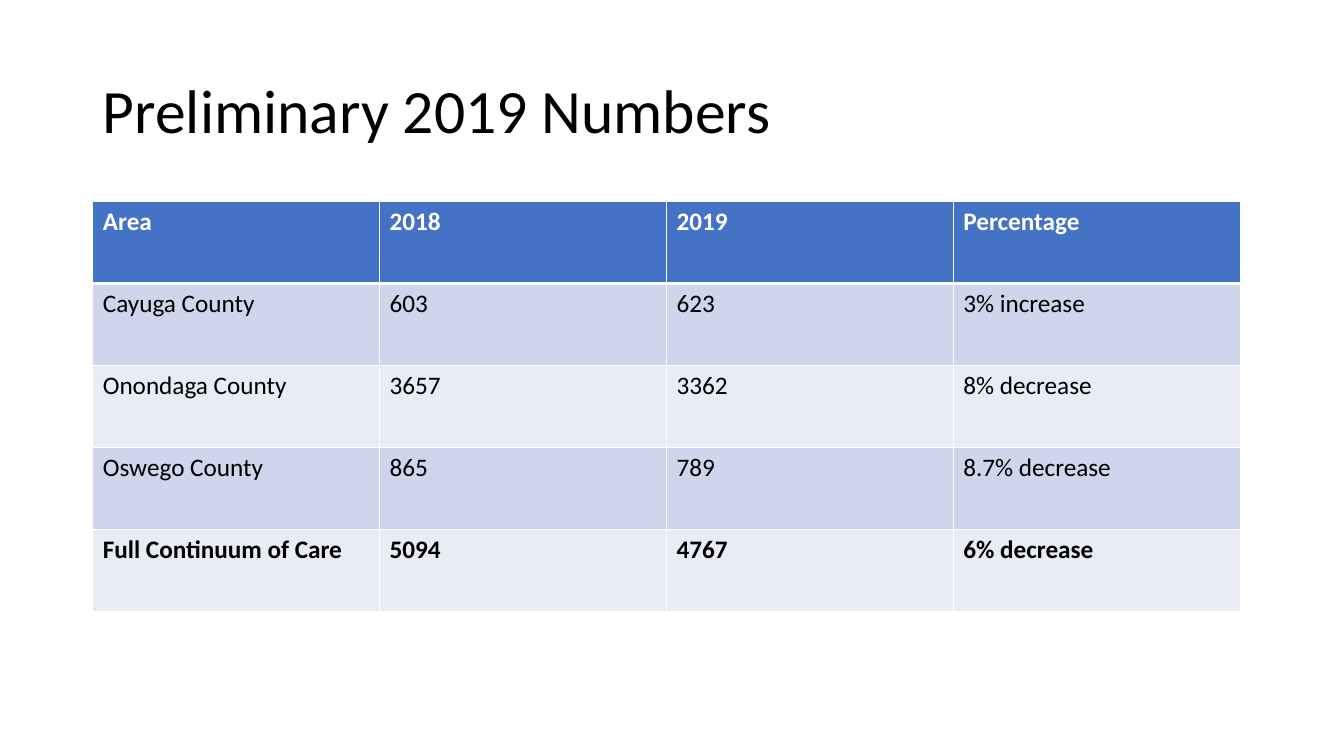
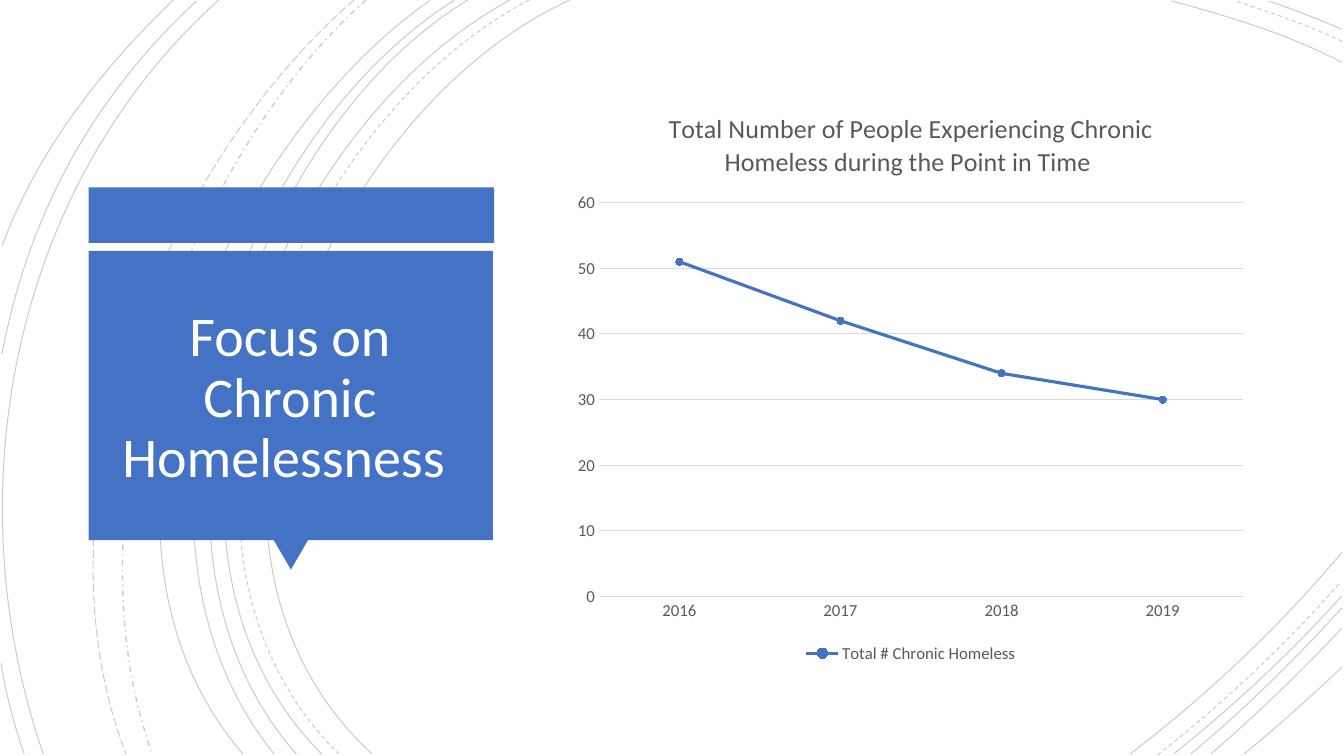
from lxml.etree import SubElement
from pptx import Presentation
from pptx.chart.data import CategoryChartData as ChartData
from pptx.dml.color import RGBColor as RGB
from pptx.enum.chart import XL_CHART_TYPE as CHART
from pptx.enum.chart import XL_LEGEND_POSITION as LEGEND
from pptx.enum.chart import XL_MARKER_STYLE as MARKER
from pptx.enum.chart import XL_TICK_MARK as TICK
from pptx.enum.dml import MSO_LINE as DASH
from pptx.enum.shapes import MSO_SHAPE as SHAPE
from pptx.enum.text import MSO_ANCHOR as ANCHOR
from pptx.enum.text import MSO_AUTO_SIZE as FIT
from pptx.enum.text import PP_ALIGN as ALIGN
from pptx.oxml import parse_xml
from pptx.oxml.ns import nsdecls, qn
from pptx.util import Inches, Pt

FONT = "Calibri"
BLACK = RGB(0, 0, 0)
WHITE = RGB(255, 255, 255)
BLUE = RGB(0x44, 0x72, 0xC4)
BANDS = RGB(0xCF, 0xD5, 0xEA), RGB(0xE9, 0xEB, 0xF5)
GRAY = RGB(0x59, 0x59, 0x59)
RULE = RGB(0xD9, 0xD9, 0xD9)

ROWS = [
    ("Area", "2018", "2019", "Percentage"),
    ("Cayuga County", "603", "623", "3% increase"),
    ("Onondaga County", "3657", "3362", "8% decrease"),
    ("Oswego County", "865", "789", "8.7% decrease"),
    ("Full Continuum of Care", "5094", "4767", "6% decrease"),
]

ARCS = [
    (DASH.SOLID, 0.75, [
        [(5.65, 0), (3.15, 1.15), (1.43, 5.4), (3.69, 7.48)],
        [(13.31, 0.62), (12.78, 0.34), (12.18, 0.16), (11.62, 0.01)],
        [(11.21, 7.48), (11.97, 6.9), (12.69, 6.22), (13.31, 5.48)],
        [(5.06, 0), (2.7, 1.27), (1.1, 5.37), (3.19, 7.48)],
        [(13.31, 0.29), (13.07, 0.19), (12.83, 0.09), (12.58, 0.01)],
        [(11.64, 7.48), (12.23, 7.01), (12.8, 6.48), (13.31, 5.91)],
        [(4.64, 0), (2.44, 1.33), (1.1, 5.41), (2.94, 7.48)],
        [(11.81, 7.48), (12.34, 7.04), (12.84, 6.55), (13.31, 6.03)],
        [(4.51, 0), (2.31, 1.38), (0.97, 5.33), (2.72, 7.48)],
        [(12.01, 7.48), (12.46, 7.09), (12.9, 6.67), (13.31, 6.23)],
        [(4.27, 0), (2.17, 1.47), (0.53, 5.29), (2.41, 7.48)],
        [(12.34, 7.48), (12.67, 7.21), (12.99, 6.92), (13.31, 6.62)],
        [(2.17, 0), (0.11, 1.85), (-0.46, 4.9), (0.43, 7.48)],
        [(1.95, 0.01), (0.92, 0.96), (0.28, 2.14), (0.02, 3.51)],
        [(0.01, 6.58), (0.06, 6.89), (0.14, 7.19), (0.24, 7.48)],
        [(1.72, 0), (1, 0.69), (0.37, 1.5), (0.02, 2.44)],
    ]),
    (DASH.DASH, 0.75, [
        [(5.25, 0), (2.85, 1.25), (1.23, 5.37), (3.36, 7.48)],
        [(13.31, 0.41), (12.97, 0.25), (12.6, 0.12), (12.25, 0.01)],
        [(11.48, 7.49), (12.13, 6.98), (12.75, 6.4), (13.3, 5.77)],
    ]),
    (DASH.DASH_DOT, 1, [
        [(3.63, 0), (1.76, 1.66), (0.65, 5.09), (1.51, 7.48)],
    ]),
    (DASH.LONG_DASH, 0.75, [
        [(3.51, 0), (1.57, 1.69), (0.29, 4.99), (1.25, 7.48)],
    ]),
]


def style(font, size, color, bold=False):
    font.name = FONT
    font.size = Pt(size)
    font.bold = bold
    font.color.rgb = color


def place(shape, box):
    shape.left, shape.top, shape.width, shape.height = map(Inches, box)


def add_title(slide, text, box, size, color, align):
    title = slide.shapes.title
    place(title, box)
    slide.shapes._spTree.append(title._element)
    frame = title.text_frame
    frame.text = text
    frame.word_wrap = True
    frame.auto_size = FIT.NONE
    frame.vertical_anchor = ANCHOR.MIDDLE
    para = frame.paragraphs[0]
    para.alignment = align
    para.line_spacing = 0.9
    style(para.runs[0].font, size, color)


def add_edges(cell, base):
    props = cell._tc.get_or_add_tcPr()
    for side in "LRTB":
        width = Pt(base if side == "B" else 1)
        props.append(parse_xml(
            f'<a:ln{side} {nsdecls("a")} w="{width}"><a:solidFill>'
            f'<a:srgbClr val="{WHITE}"/></a:solidFill></a:ln{side}>'))


def add_grid(slide, rows, box):
    spot = map(Inches, box)
    table = slide.shapes.add_table(len(rows), len(rows[0]), *spot).table
    last = len(rows) - 1
    for r, row in enumerate(rows):
        for c, text in enumerate(row):
            cell = table.cell(r, c)
            cell.text = text
            add_edges(cell, 1 if r else 3)
            cell.fill.solid()
            cell.fill.fore_color.rgb = BANDS[(r - 1) % 2] if r else BLUE
            font = cell.text_frame.paragraphs[0].runs[0].font
            style(font, 18, BLACK if r else WHITE, r in (0, last))


def add_arc(slide, knots, dash, width):
    dots = [(Inches(x), Inches(y)) for x, y in knots]
    pen = slide.shapes.build_freeform(*dots[0])
    pen.add_line_segments(dots[1:], close=False)
    arc = pen.convert_to_shape()
    route = arc._element.find(".//" + qn("a:path"))
    legs = route.findall(qn("a:lnTo"))
    curve = SubElement(route, qn("a:cubicBezTo"))
    for leg in legs:
        curve.append(leg[0])
        route.remove(leg)
    arc.shadow.inherit = False
    arc.fill.background()
    arc.line.width = Pt(width)
    arc.line.color.rgb = BLACK
    arc.line.dash_style = dash
    tint = arc.line._ln.find(".//" + qn("a:srgbClr"))
    SubElement(tint, qn("a:alpha"), val="20000")


def add_block(slide, kind, box, turn=0):
    block = slide.shapes.add_shape(kind, *map(Inches, box))
    block.rotation = turn
    block.shadow.inherit = False
    block.fill.solid()
    block.fill.fore_color.rgb = BLUE
    block.line.fill.background()


def set_axis(axis):
    axis.major_tick_mark = axis.minor_tick_mark = TICK.NONE
    style(axis.tick_labels.font, 12, GRAY)


def set_plot(chart, x, y, w, h):
    area = chart._chartSpace.chart.plotArea
    for old in area.findall(qn("c:layout")):
        area.remove(old)
    area.insert(0, parse_xml(
        f'<c:layout {nsdecls("c")}><c:manualLayout>'
        '<c:layoutTarget val="inner"/><c:xMode val="edge"/>'
        f'<c:yMode val="edge"/><c:x val="{x}"/><c:y val="{y}"/>'
        f'<c:w val="{w}"/><c:h val="{h}"/></c:manualLayout></c:layout>'))


def add_trend(slide, box):
    data = ChartData()
    data.categories = ["2016", "2017", "2018", "2019"]
    data.add_series("Total # Chronic Homeless", [51, 42, 34, 30])
    chart = slide.shapes.add_chart(
        CHART.LINE_MARKERS, *map(Inches, box), data).chart
    style(chart.font, 10, BLACK)
    chart.has_title = True
    head = chart.chart_title.text_frame
    head.text = ("Total Number of People Experiencing Chronic "
                 "Homeless during the Point in Time ")
    style(head.paragraphs[0].runs[0].font, 18.6, GRAY)
    chart.has_legend = True
    chart.legend.position = LEGEND.BOTTOM
    chart.legend.include_in_layout = False
    style(chart.legend.font, 12, GRAY)

    years, counts = chart.category_axis, chart.value_axis
    set_axis(years)
    set_axis(counts)
    years.format.line.color.rgb = RULE
    years.format.line.width = Pt(0.75)
    counts.minimum_scale, counts.maximum_scale = 0, 60
    counts.major_unit = 10
    counts.format.line.fill.background()
    grid = counts.major_gridlines.format.line
    grid.color.rgb = RULE
    grid.width = Pt(0.75)

    chart.plots[0].vary_by_categories = False
    line = chart.plots[0].series[0]
    line.smooth = False
    line.format.line.color.rgb = BLUE
    line.format.line.width = Pt(2.25)
    dot = line.marker
    dot.style = MARKER.CIRCLE
    dot.size = 5
    dot.format.fill.solid()
    dot.format.fill.fore_color.rgb = BLUE
    dot.format.line.color.rgb = BLUE
    wide, high = box[2:]
    set_plot(chart, 0.34 / wide, 1.13 / high, 6.39 / wide, 3.91 / high)


def main():
    deck = Presentation()
    deck.slide_width, deck.slide_height = Inches(13.33), Inches(7.5)
    layout = deck.slide_layouts[5]

    slide = deck.slides.add_slide(layout)
    add_title(slide, "Preliminary 2019 Numbers", (0.92, 0.4, 11.5, 1.45),
              44, BLACK, ALIGN.LEFT)
    add_grid(slide, ROWS, (0.92, 2, 11.38, 4.07))

    slide = deck.slides.add_slide(layout)
    for dash, width, arcs in ARCS:
        for knots in arcs:
            add_arc(slide, knots, dash, width)
    add_block(slide, SHAPE.RECTANGLE, (0.88, 1.86, 4.02, 0.55))
    add_block(slide, SHAPE.ISOSCELES_TRIANGLE, (2.71, 5.35, 0.35, 0.3), 180)
    add_block(slide, SHAPE.RECTANGLE, (0.88, 2.49, 4.01, 2.87))
    add_title(slide, "Focus on Chronic Homelessness ",
              (0.99, 2.65, 3.77, 2.62), 40, WHITE, ALIGN.CENTER)
    add_trend(slide, (5.6, 0.88, 6.87, 5.74))

    deck.save("out.pptx")


if __name__ == "__main__":
    main()
